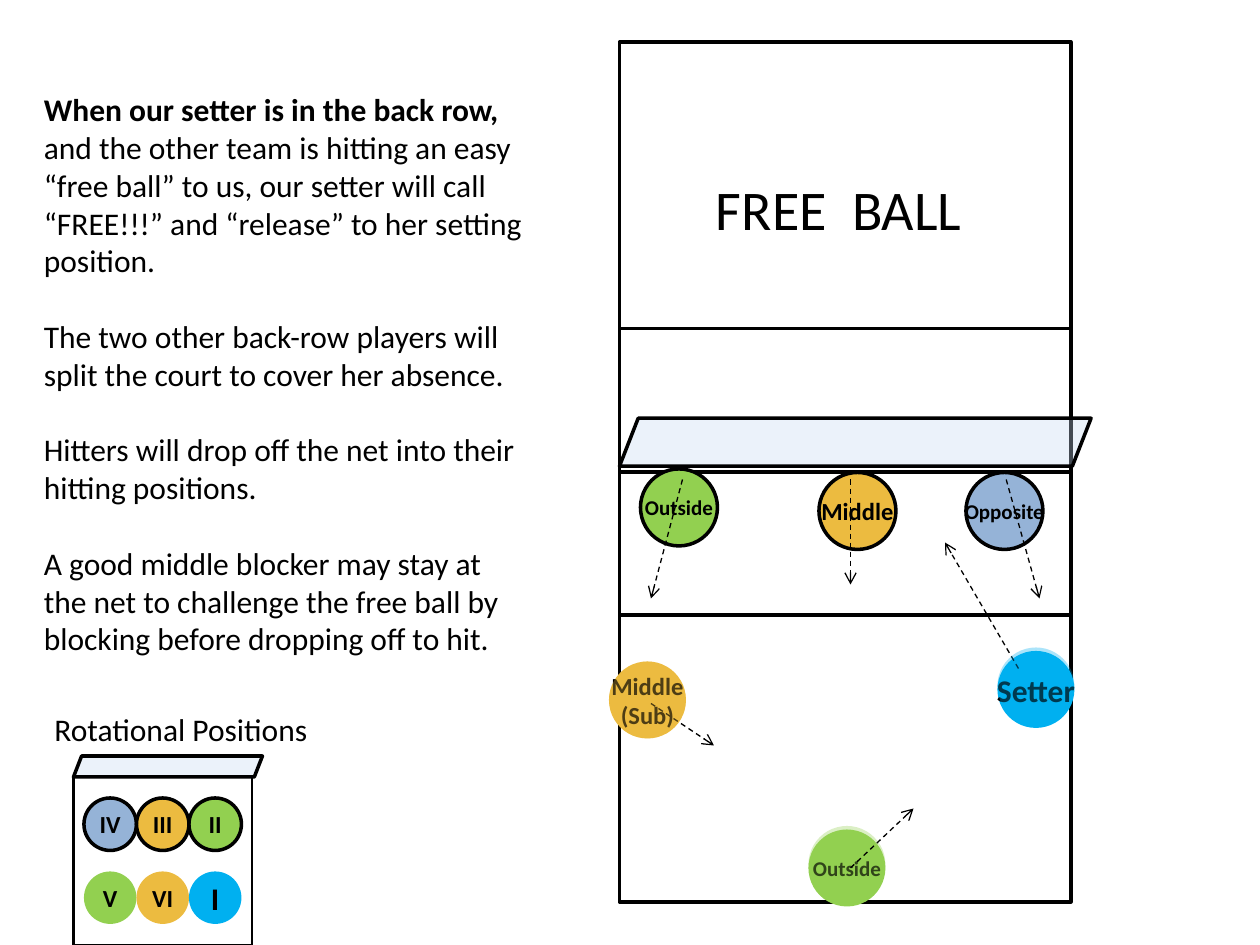
from dataclasses import dataclass

from lxml import etree
from pptx import Presentation
from pptx.dml.color import RGBColor
from pptx.enum import dml, shapes, text
from pptx.oxml import ns
from pptx.util import Pt


@dataclass(frozen=True)
class Theme:
    font: str = "Calibri"
    ink: str = "000000"
    white: str = "FFFFFF"
    net: str = "C6D9F1"
    blue: str = "95B3D7"
    gold: str = "ECBB40"
    green: str = "92D050"
    cyan: str = "00B0F0"
    small: int = 12
    label: int = 14
    body: int = 18
    title: int = 32


T = Theme()
KIND = shapes.MSO_SHAPE
ALIGN = text.PP_ALIGN


def rgb(code):
    return RGBColor.from_string(code)


def sub(parent, tag, **attrs):
    return etree.SubElement(parent, ns.qn(tag), attrs)


def write(para, words, size=T.body, bold=False, align=ALIGN.LEFT, after=0):
    """Add words to a paragraph; a newline becomes a line break."""
    para.alignment = align
    para.space_after = Pt(after)
    for i, line in enumerate(words.split("\n")):
        if i:
            para.add_line_break()
        run = para.add_run()
        run.text = line
        font = run.font
        font.name, font.size, font.bold = T.font, Pt(size), bold
        font.color.rgb = rgb(T.ink)


class Board:
    def __init__(self, slide, theme):
        self.slide = slide
        self.theme = theme

    def shape(self, kind, x, y, w, h, fill=None, line=0, alpha=None):
        """Add a preset shape; alpha is the opacity of its fill in percent."""
        item = self.slide.shapes.add_shape(kind, Pt(x), Pt(y), Pt(w), Pt(h))
        item.shadow.inherit = False
        if fill:
            item.fill.solid()
            item.fill.fore_color.rgb = rgb(fill)
        else:
            item.fill.background()
        if alpha:
            color = item._element.spPr.find(".//" + ns.qn("a:srgbClr"))
            sub(color, "a:alpha", val=str(alpha * 1000))
        if line:
            item.line.color.rgb = rgb(self.theme.ink)
            item.line.width = Pt(line)
        else:
            item.line.fill.background()
        return item

    def net(self, x, y, w, h):
        item = self.shape(KIND.PARALLELOGRAM, x, y, w, h, self.theme.net, 2, 34)
        item.adjustments[0] = 0.39

    def disc(self, x, y, d, fill, words="", size=T.label, line=0, alpha=None):
        item = self.shape(KIND.OVAL, x, y, d, d, fill, line, alpha)
        if words:
            frame = item.text_frame
            frame.word_wrap = False
            frame.vertical_anchor = text.MSO_ANCHOR.MIDDLE
            frame.margin_left = frame.margin_right = 0
            frame.margin_top = frame.margin_bottom = 0
            write(frame.paragraphs[0], words, size, True, ALIGN.CENTER)

    def arrow(self, x1, y1, x2, y2):
        item = self.slide.shapes.add_connector(
            shapes.MSO_CONNECTOR.STRAIGHT, Pt(x1), Pt(y1), Pt(x2), Pt(y2))
        item.line.color.rgb = rgb(self.theme.ink)
        item.line.width = Pt(0.75)
        item.line.dash_style = dml.MSO_LINE.DASH
        sub(item.line._get_or_add_ln(), "a:tailEnd", type="arrow")
        sub(item._element.spPr, "a:effectLst")

    def box(self, x, y, w, h, wrap=True):
        item = self.slide.shapes.add_textbox(Pt(x), Pt(y), Pt(w), Pt(h))
        item.text_frame.word_wrap = wrap
        return item.text_frame


def court(board):
    x, y, w, deep, front = 354, 24, 258, 163.8, 81.9
    for h in (deep, front, front, deep):
        board.shape(KIND.RECTANGLE, x, y, w, h, T.white, 2)
        y += h
    board.net(x, 239, 269.5, 27.4)


def team(board):
    d = 44
    for x, y, fill, words, size, line in (
        (552, 270, T.blue, "Opposite", T.small, 2),
        (468, 270, T.gold, "Middle", T.label, 2),
        (462, 474, T.green, "Outside", T.small, 0),
        (570, 372, T.cyan, "Setter", T.body, 0),
        (366, 268, T.green, "Outside", T.small, 2),
        (348, 378, T.gold, "Middle\n(Sub)", T.label, 0),
    ):
        board.disc(x, y, d, fill, words, size, line)
    for ends in (
        (582, 382, 540, 310),
        (575, 274, 594, 342),
        (486, 274, 486, 334),
        (390, 274, 372, 342),
        (372, 402, 408, 426),
    ):
        board.arrow(*ends)
    for x, y, fill in ((348, 378, T.gold), (462, 472, T.green),
                       (570, 370, T.cyan)):
        board.disc(x, y, d, fill, alpha=33)
    board.arrow(486, 496, 522, 462)


def notes(board):
    frame = board.box(18, 48, 288, 334)
    para = frame.paragraphs[0]
    gap = 21.6
    write(para, "When our setter is in the back row, ", bold=True)
    write(para, "and the other team is hitting an easy “free ball” to us, "
          "our setter will call “FREE!!!” and “release” to her setting "
          "position.", after=gap)
    for words in (
        "The two other back-row players will split the court to cover her "
        "absence.",
        "Hitters will drop off the net into their hitting positions.",
        "A good middle blocker may stay at the net to challenge the free "
        "ball by blocking before dropping off to hit.",
    ):
        write(frame.add_paragraph(), words, after=gap)
    write(board.box(402, 96, 204, 46).paragraphs[0], "FREE  BALL", T.title)


def key(board):
    board.net(42, 432, 108, 12)
    d = 30
    rows = (
        (456, 2, (("IV", T.blue), ("III", T.gold), ("II", T.green))),
        (498, 0, (("V", T.green), ("VI", T.gold), ("I", T.cyan))),
    )
    for y, line, spots in rows:
        for col, (words, fill) in enumerate(spots):
            size = T.body if words == "I" else T.label
            board.disc(48 + col * d, y, d, fill, words, size, line)
    board.shape(KIND.RECTANGLE, 42, 444, 102, 96, line=1.5)
    frame = board.box(24, 402, 160.6, 29, wrap=False)
    write(frame.paragraphs[0], "Rotational Positions")


def main():
    deck = Presentation()
    deck.slide_width, deck.slide_height = Pt(720), Pt(540)
    board = Board(deck.slides.add_slide(deck.slide_layouts[6]), T)
    for part in (court, team, notes, key):
        part(board)
    deck.save("out.pptx")


if __name__ == "__main__":
    main()
